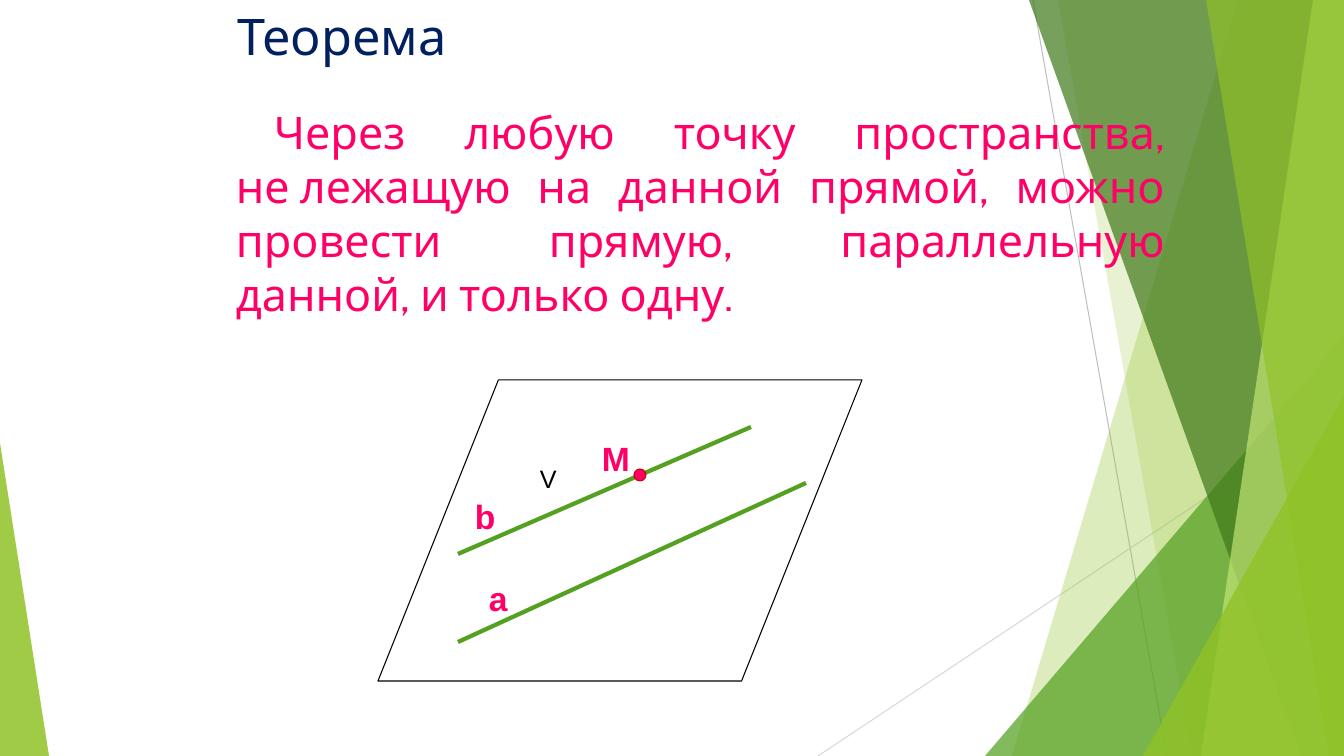
from dataclasses import dataclass

import lxml.etree
import pptx
import pptx.dml.color
import pptx.enum.shapes
import pptx.enum.text
import pptx.oxml.ns
import pptx.util

Preset = pptx.enum.shapes.MSO_SHAPE
Align = pptx.enum.text.PP_ALIGN
qn = pptx.oxml.ns.qn

SLIDE_W, SLIDE_H = 1344, 756
EMU_PER_PX = 12192000 / SLIDE_W
NO_BREAK = chr(160)


@dataclass(frozen=True)
class Theme:
    heading_font: str = "Cabin"
    label_font: str = "Arial"
    navy: str = "002060"
    pink: str = "FF0066"
    red: str = "CC0000"
    black: str = "000000"
    lime: str = "90C226"
    pale_lime: str = "C0E474"
    green: str = "54A021"
    dark_green: str = "3F7819"
    grey: str = "BFBFBF"
    light_grey: str = "D9D9D9"
    title_size: int = 36
    theorem_size: int = 32
    label_size: int = 24
    small_size: int = 18
    thin: float = 0.75
    thick: float = 3


THEME = Theme()


@dataclass(frozen=True)
class Segment:
    start: tuple[int, int]
    end: tuple[int, int]
    color: str
    width: float


@dataclass(frozen=True)
class Band:
    """A strip running from the top edge to the bottom edge at the right."""
    top_x: int
    bottom_x: int
    color: str
    opacity: int


@dataclass(frozen=True)
class Figure:
    preset: Preset
    box: tuple[int, int, int, int]
    fill: str | None = None
    opacity: int = 100
    line: str | None = None
    adjust: float | None = None


@dataclass(frozen=True)
class Caption:
    text: str
    box: tuple[int, int, int, int]
    size: int
    color: str
    font: str = THEME.label_font
    bold: bool = False
    wrap: bool = False
    align: Align = Align.LEFT
    first_indent: int = 0


def px(length: float) -> pptx.util.Emu:
    return pptx.util.Emu(round(length * EMU_PER_PX))


def rgb(color: str) -> pptx.dml.color.RGBColor:
    return pptx.dml.color.RGBColor.from_string(color)


def assign(target: object, values: dict[str, object]) -> None:
    for name, value in values.items():
        setattr(target, name, value)


def paint(shape, fill: str | None, opacity: int, line: str | None) -> None:
    shape.shadow.inherit = False
    if fill:
        shape.fill.solid()
        shape.fill.fore_color.rgb = rgb(fill)
        if opacity < 100:
            color = shape.fill._xPr.find(qn("a:solidFill"))[0]
            lxml.etree.SubElement(color, qn("a:alpha"), val=str(opacity * 1000))
    else:
        shape.fill.background()
    if line:
        shape.line.color.rgb = rgb(line)
        shape.line.width = pptx.util.Pt(THEME.thin)
    else:
        shape.line.fill.background()


def draw_segment(shapes, segment: Segment) -> None:
    ends = [px(v) for v in (*segment.start, *segment.end)]
    line = shapes.add_connector(pptx.enum.shapes.MSO_CONNECTOR.STRAIGHT, *ends)
    line.line.color.rgb = rgb(segment.color)
    line.line.width = pptx.util.Pt(segment.width)
    lxml.etree.SubElement(line._element.spPr, qn("a:effectLst"))


def draw_band(shapes, band: Band) -> None:
    builder = shapes.build_freeform(band.top_x, 0, scale=EMU_PER_PX)
    builder.add_line_segments(
        [(SLIDE_W, 0), (SLIDE_W, SLIDE_H), (band.bottom_x, SLIDE_H)], close=True)
    paint(builder.convert_to_shape(), band.color, band.opacity, None)


def draw_figure(shapes, figure: Figure) -> None:
    shape = shapes.add_shape(figure.preset, *map(px, figure.box))
    if figure.adjust is not None:
        shape.adjustments[0] = figure.adjust
    paint(shape, figure.fill, figure.opacity, figure.line)


def draw_caption(shapes, caption: Caption) -> None:
    frame = shapes.add_textbox(*map(px, caption.box)).text_frame
    frame.word_wrap = caption.wrap
    paragraph = frame.paragraphs[0]
    paragraph.alignment = caption.align
    if caption.first_indent:
        paragraph._p.get_or_add_pPr().set("indent", str(px(caption.first_indent)))
    run = paragraph.add_run()
    run.text = caption.text
    assign(run.font, {"name": caption.font, "size": pptx.util.Pt(caption.size),
                      "bold": caption.bold})
    run.font.color.rgb = rgb(caption.color)


DRAW = {Segment: draw_segment, Band: draw_band, Figure: draw_figure,
        Caption: draw_caption}

# Background facets, back to front
BACKGROUND = [
    Segment((1033, 0), (1167, 756), THEME.grey, THEME.thin),
    Segment((1344, 406), (818, 756), THEME.light_grey, THEME.thin),
    Band(1238, 1012, THEME.lime, 30),
    Band(1058, 1192, THEME.lime, 20),
    Figure(Preset.ISOSCELES_TRIANGLE, (985, 336, 359, 420), THEME.green, 72, adjust=1),
    Band(1029, 1301, THEME.dark_green, 70),
    Band(1313, 1201, THEME.pale_lime, 70),
    Band(1206, 1329, THEME.lime, 65),
    Figure(Preset.ISOSCELES_TRIANGLE, (1143, 396, 201, 360), THEME.lime, 80, adjust=1),
    Figure(Preset.ISOSCELES_TRIANGLE, (0, 443, 49, 313), THEME.lime, 85, adjust=0),
]

# Heading and theorem; no-break spaces keep the line ends in place
STATEMENT = [
    Caption("Теорема", (228, 0, 914, 85), THEME.title_size, THEME.navy,
            THEME.heading_font, wrap=True),
    Caption(f"Через любую точку пространства, не{NO_BREAK}лежащую на данной прямой, "
            f"можно провести прямую, параллельную данной,{NO_BREAK}и только одну.",
            (226, 100, 949, 240), THEME.theorem_size, THEME.pink,
            THEME.heading_font, wrap=True, align=Align.JUSTIFY, first_indent=38),
]

# Plane with the parallel lines a and b, and point M on b
DRAWING = [
    Segment((458, 642), (806, 483), THEME.green, THEME.thick),
    Caption("a", (479, 573, 39, 50), THEME.label_size, THEME.pink, bold=True),
    Caption("V", (530, 458, 36, 40), THEME.small_size, THEME.black),
    Caption("M", (592, 433, 70, 50), THEME.label_size, THEME.pink, bold=True),
    Figure(Preset.PARALLELOGRAM, (378, 380, 484, 301), line=THEME.black, adjust=0.4),
    Segment((458, 554), (751, 427), THEME.green, THEME.thick),
    Caption("b", (465, 491, 40, 50), THEME.label_size, THEME.pink, bold=True),
    Figure(Preset.OVAL, (634, 469, 12, 12), THEME.pink, line=THEME.red),
]


def main() -> None:
    deck = pptx.Presentation()
    assign(deck, {"slide_width": px(SLIDE_W), "slide_height": px(SLIDE_H)})
    slide = deck.slides.add_slide(deck.slide_layouts[6])
    for part in BACKGROUND + STATEMENT + DRAWING:
        DRAW[type(part)](slide.shapes, part)
    deck.save("out.pptx")


if __name__ == "__main__":
    main()
